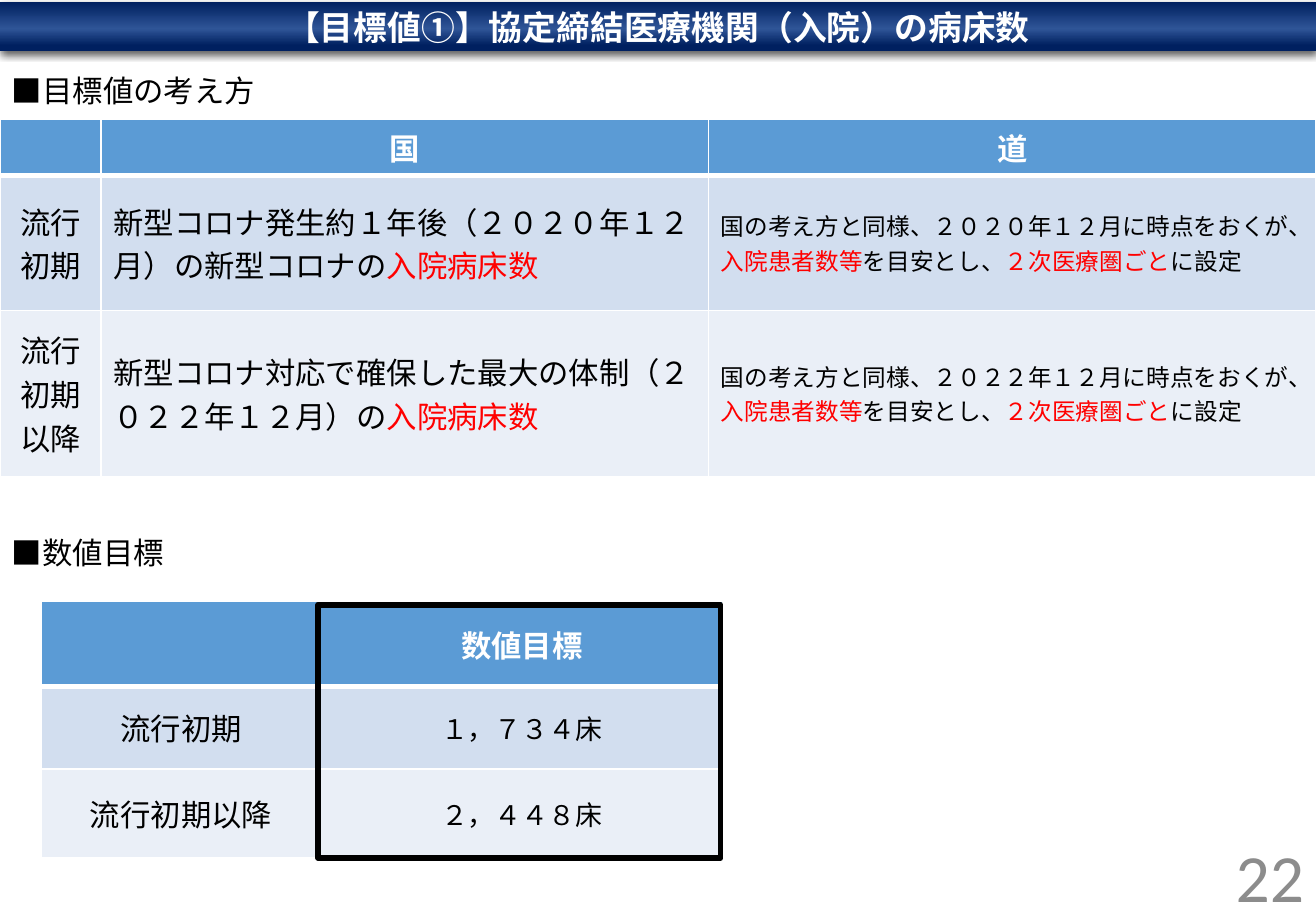
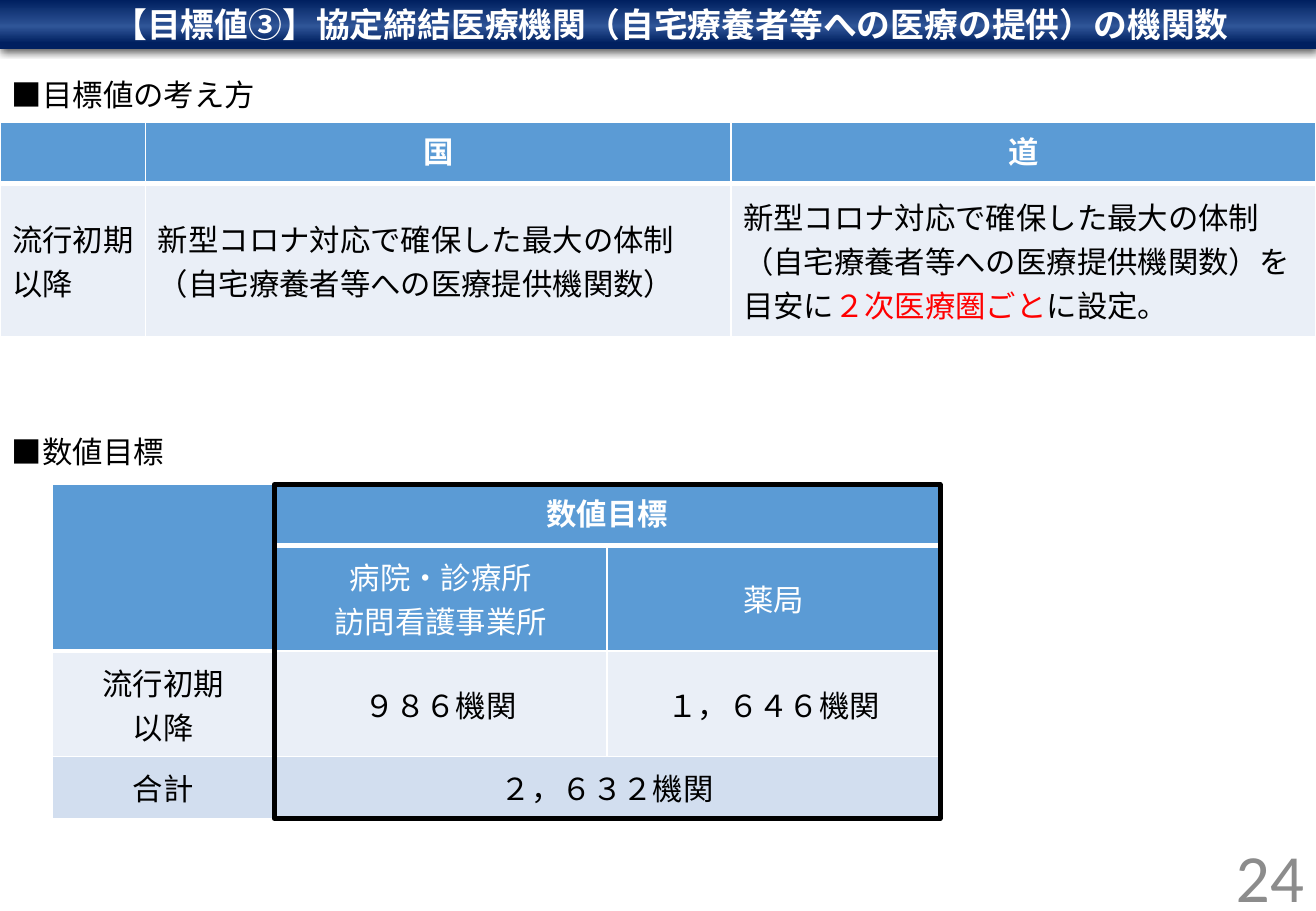
from lxml import etree
from pptx import Presentation
from pptx.dml.color import RGBColor
from pptx.enum.shapes import MSO_SHAPE
from pptx.enum.text import MSO_ANCHOR, MSO_AUTO_SIZE, PP_ALIGN
from pptx.oxml import parse_xml
from pptx.oxml.ns import nsdecls, qn
from pptx.util import Pt

LEFT, CENTER, RIGHT = PP_ALIGN.LEFT, PP_ALIGN.CENTER, PP_ALIGN.RIGHT
TOP, MIDDLE = MSO_ANCHOR.TOP, MSO_ANCHOR.MIDDLE
NO_AUTOFIT = MSO_AUTO_SIZE.NONE
RECTANGLE = MSO_SHAPE.RECTANGLE

WHITE = RGBColor(0xFF, 0xFF, 0xFF)
BLACK = RGBColor(0x00, 0x00, 0x00)
RED = RGBColor(0xFF, 0x00, 0x00)
GRAY = RGBColor(0x8C, 0x8C, 0x8C)
HEAD = RGBColor(0x5B, 0x9B, 0xD5)
BAND = RGBColor(0xD2, 0xDE, 0xEF)
PALE = RGBColor(0xEA, 0xEF, 0xF7)
NAVY = RGBColor(0x00, 0x20, 0x60)
BLUE = RGBColor(0x2F, 0x55, 0x97)

JP_FONT, NUMBER_FONT = "Noto Sans CJK JP", "Calibri"
SLIDE_W, SLIDE_H = 780, 540
TITLE_H = 29
LABEL_H = 21.6

GRADIENT = f"""<a:gradFill {nsdecls('a')} rotWithShape="1"><a:gsLst>
<a:gs pos="0"><a:srgbClr val="{NAVY}"/></a:gs>
<a:gs pos="54000"><a:srgbClr val="{BLUE}"/></a:gs>
<a:gs pos="88000"><a:srgbClr val="{NAVY}"/></a:gs>
</a:gsLst><a:lin ang="5400000" scaled="0"/></a:gradFill>"""
SHADOW = f"""<a:effectLst {nsdecls('a')}>
<a:outerShdw blurRad="57150" dist="19050" dir="5400000" algn="ctr" rotWithShape="0">
<a:srgbClr val="{BLACK}"><a:alpha val="63000"/></a:srgbClr></a:outerShdw></a:effectLst>"""


def write(tf, text, size, color=BLACK, bold=False, align=LEFT, font=JP_FONT):
    """Write one paragraph a line; the parts between bars are red."""
    for i, line in enumerate(text.split("\n")):
        p = tf.paragraphs[0] if i == 0 else tf.add_paragraph()
        p.alignment = align
        p.font.size = Pt(size)
        p.font.bold = bold
        p.font.color.rgb = color
        p.font.name = font
        etree.SubElement(p.font._element, qn("a:ea"), typeface=font)
        for j, part in enumerate(line.split("|")):
            r = p.add_run()
            r.text = part
            if j % 2:
                r.font.color.rgb = RED


def add_title(s, text, y=0, indent=None):
    """Fill the title band; the text is centred unless an indent is given."""
    sp = s.shapes.title
    sp.left, sp.top, sp.width, sp.height = 0, Pt(y), Pt(SLIDE_W), Pt(TITLE_H)
    for xml in (GRADIENT, SHADOW):
        sp._element.spPr.append(parse_xml(xml))
    tf = sp.text_frame
    tf.auto_size = NO_AUTOFIT
    tf.vertical_anchor = MIDDLE
    if indent:
        tf.margin_left = Pt(indent)
    write(tf, text, 20, WHITE, True, LEFT if indent else CENTER)


def add_text(s, box, text, size, **style):
    tf = s.shapes.add_textbox(*map(Pt, box)).text_frame
    tf.word_wrap = True
    tf.auto_size = NO_AUTOFIT
    tf.vertical_anchor = MIDDLE
    write(tf, text, size, **style)


def add_label(s, y, text):
    add_text(s, (0, y, 200, LABEL_H), text, 18)


def add_page_number(s, number):
    w, h = 176, 42.4
    add_text(s, (SLIDE_W - w, SLIDE_H - h, w, h), number, 40,
             color=GRAY, align=RIGHT, font=NUMBER_FONT)


def set_borders(cell, top, bottom):
    tcPr = cell._tc.get_or_add_tcPr()
    for i, (side, width) in enumerate(
            (("L", 1), ("R", 1), ("T", top), ("B", bottom))):
        tcPr.insert(i, parse_xml(
            f'<a:ln{side} {nsdecls("a")} w="{Pt(width)}"><a:solidFill>'
            f'<a:srgbClr val="{WHITE}"/></a:solidFill></a:ln{side}>'))


def add_grid(s, x, y, cols, rows, cells, fills, sizes, centred,
             head_anchor=TOP, merges=()):
    """Add a table; fills go by row, sizes and centred columns by column."""
    table = s.shapes.add_table(len(rows), len(cols), Pt(x), Pt(y),
                               Pt(sum(cols)), Pt(sum(rows))).table
    table.horz_banding = False
    for column, width in zip(table.columns, cols):
        column.width = Pt(width)
    for row, height in zip(table.rows, rows):
        row.height = Pt(height)
    for r, texts in enumerate(cells):
        head = r == 0
        for c, text in enumerate(texts):
            cell = table.cell(r, c)
            cell.fill.solid()
            cell.fill.fore_color.rgb = fills[r]
            set_borders(cell, 3 if r == 1 else 1, 3 if head else 1)
            cell.vertical_anchor = head_anchor if head else MIDDLE
            if text:
                write(cell.text_frame, text, 18 if head else sizes[c],
                      WHITE if fills[r] == HEAD else BLACK, head,
                      CENTER if head or c in centred else LEFT)
    for first, last in merges:
        table.cell(*first).merge(table.cell(*last))


def add_targets(s, x, y, cols, rows, frame_width, dx=0, dy=0, **grid):
    """Add the table of targets with a frame around its value columns."""
    add_grid(s, x, y, cols, rows, centred=range(len(cols)), **grid)
    sp = s.shapes.add_shape(
        RECTANGLE, Pt(x + cols[0] + dx), Pt(y + dy),
        Pt(sum(cols[1:])), Pt(sum(rows) - dy))
    sp.shadow.inherit = False
    sp.fill.background()
    sp.line.color.rgb = BLACK
    sp.line.width = Pt(frame_width)


def approach(year):
    return (f"国の考え方と同様、{year}年１２月に時点をおくが、"
            "|入院患者数等|を目安とし、|２次医療圏ごと|に設定")


def build_beds(s):
    add_title(s, "【目標値①】協定締結医療機関（入院）の病床数", y=1.4)
    add_label(s, 42.5, "■目標値の考え方")
    add_grid(s, 0, 70.6, (60, 360, 360), (27.4, 80, 98.6), [
        ("", "国", "道"),
        ("流行初期",
         "新型コロナ発生約１年後（２０２０年１２月）の新型コロナの|入院病床数|",
         approach("２０２０")),
        ("流行初期以降",
         "新型コロナ対応で確保した最大の体制（２０２２年１２月）の|入院病床数|",
         approach("２０２２")),
    ], fills=(HEAD, BAND, PALE), sizes=(18, 18, 14), centred=(0,))
    add_label(s, 316.8, "■数値目標")
    add_targets(s, 24.5, 356.4, (165.6, 238.4), (50.4, 49, 52.8), 3.5,
                dx=-1.4, dy=2, cells=[
                    ("", "数値目標"),
                    ("流行初期", "１，７３４床"),
                    ("流行初期以降", "２，４４８床"),
                ], fills=(HEAD, BAND, PALE), sizes=(18, 16),
                head_anchor=MIDDLE)
    add_page_number(s, "22")


def build_home_care(s):
    add_title(s, "【目標値③】協定締結医療機関（自宅療養者等への医療の提供）の機関数",
              indent=67.2)
    add_label(s, 45.4, "■目標値の考え方")
    add_grid(s, 0, 72.2, (86.4, 346.8, 346.8), (36.7, 90.7), [
        ("", "国", "道"),
        ("流行初期以降",
         "新型コロナ対応で確保した最大の体制（自宅療養者等への医療提供機関数）",
         "新型コロナ対応で確保した最大の体制（自宅療養者等への医療提供機関数）を"
         "目安に|２次医療圏ごと|に設定。"),
    ], fills=(HEAD, PALE), sizes=(18, 18, 18), centred=())
    add_label(s, 257, "■数値目標")
    add_targets(s, 31, 287.3, (131.6, 197.3, 197.3), (36, 62.6, 62.6, 36.7), 3,
                cells=[
                    ("", "数値目標", ""),
                    ("", "病院・診療所\n訪問看護事業所", "薬局"),
                    ("流行初期\n以降", "９８６機関", "１，６４６機関"),
                    ("合計", "２，６３２機関", ""),
                ], fills=(HEAD, HEAD, PALE, BAND), sizes=(18, 18, 18),
                merges=(((0, 0), (1, 0)), ((0, 1), (0, 2)), ((3, 1), (3, 2))))
    add_page_number(s, "24")


def main():
    prs = Presentation()
    prs.slide_width, prs.slide_height = Pt(SLIDE_W), Pt(SLIDE_H)
    title_only = prs.slide_layouts[5]
    for build in (build_beds, build_home_care):
        build(prs.slides.add_slide(title_only))
    prs.save("out.pptx")


if __name__ == "__main__":
    main()
